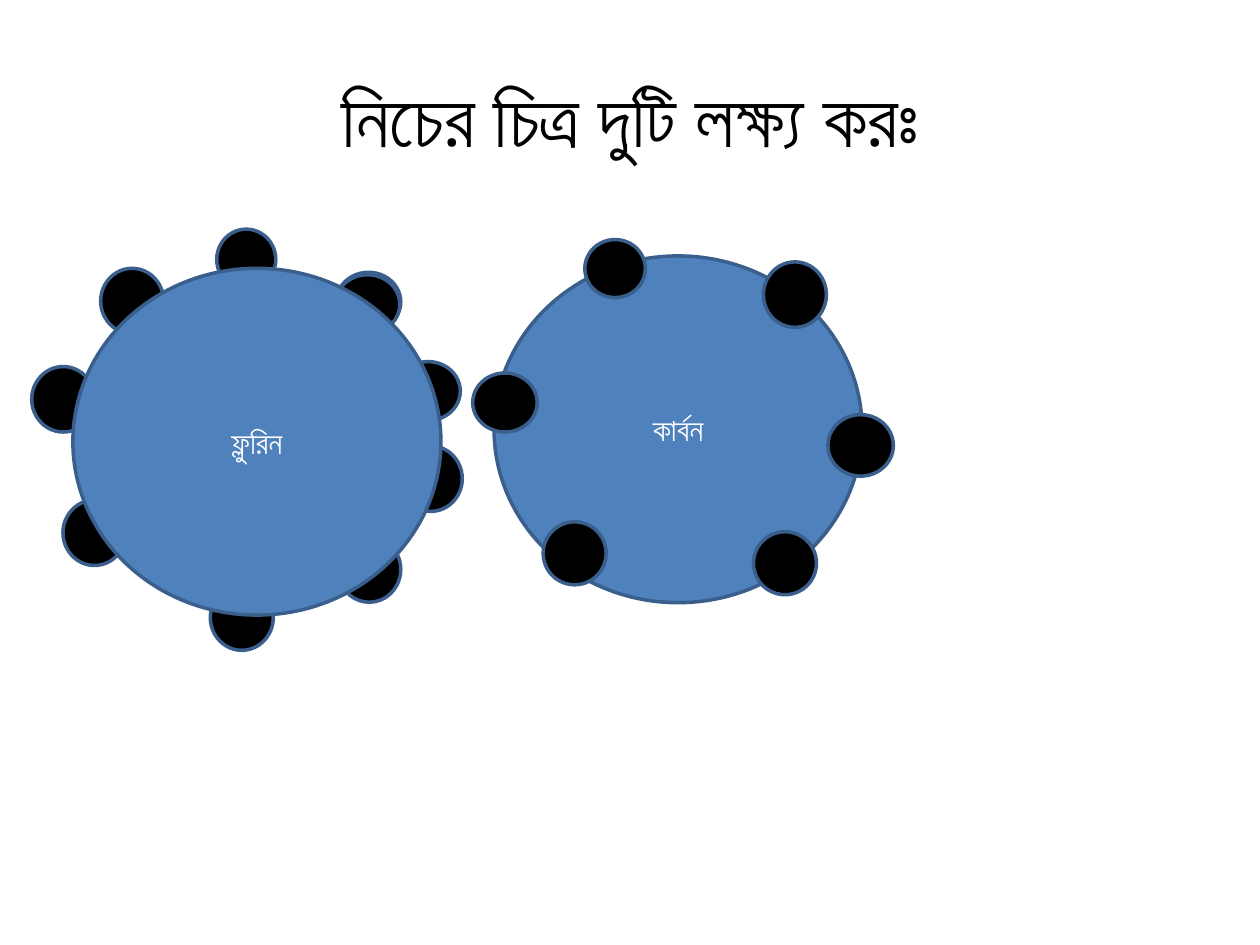
from pptx import Presentation
from pptx.dml.color import RGBColor
from pptx.enum.shapes import MSO_SHAPE as Shape
from pptx.enum.text import MSO_ANCHOR as Anchor, PP_ALIGN as Align
from pptx.util import Cm, Pt

WHITE = RGBColor(0xFF, 0xFF, 0xFF)
BLACK = RGBColor(0, 0, 0)
BLUE = RGBColor(0x4F, 0x81, 0xBD)
OUTLINE = RGBColor(0x3A, 0x5F, 0x8C)

ATOM_SIZE = (7.42, 6.99)
TALL = (1.27, 1.32)
ROUND = (1.27, 1.27)
WIDE = (1.3, 1.19)

# Electrons: left, top, size (cm), from back to front
CARBON_ELECTRONS = [
    (15.39, 5.28, TALL),
    (16.69, 8.36, (1.32, 1.24)),
    (15.19, 10.72, ROUND),
    (10.95, 10.52, ROUND),
    (9.53, 7.52, WIDE),
    (11.79, 4.83, (1.22, 1.17)),
]
FLUORINE_ELECTRONS = [
    (4.37, 4.62, (1.19, 1.22)),
    (8.05, 8.99, TALL),
    (6.81, 10.82, TALL),
    (4.24, 11.79, TALL),
    (1.27, 10.08, TALL),
    (0.64, 7.39, TALL),
    (2.03, 5.41, TALL),
    (6.78, 5.49, WIDE),
    (7.98, 7.29, WIDE),
    (6.76, 5.54, WIDE),
]


def write_text(box, text, size, color):
    frame = box.text_frame
    frame.word_wrap = True
    frame.vertical_anchor = Anchor.MIDDLE
    para = frame.paragraphs[0]
    para.alignment = Align.CENTER
    span = para.add_run()
    span.text = text
    for name, value in {"name": "Calibri", "size": Pt(size)}.items():
        setattr(span.font, name, value)
    span.font.color.rgb = color


def add_circle(page, left, top, size, fill):
    circle = page.shapes.add_shape(
        Shape.OVAL, Cm(left), Cm(top), *map(Cm, size))
    circle.shadow.inherit = False
    circle.fill.solid()
    circle.fill.fore_color.rgb = fill
    circle.line.color.rgb = OUTLINE
    circle.line.width = Pt(2)
    return circle


def add_atom(page, left, top, label):
    atom = add_circle(page, left, top, ATOM_SIZE, BLUE)
    write_text(atom, label, 18, WHITE)


def add_electrons(page, electrons):
    for left, top, size in electrons:
        add_circle(page, left, top, size, BLACK)


def add_title(page, text):
    box = page.shapes.add_textbox(Cm(1.27), Cm(0.76), Cm(22.86), Cm(3.18))
    write_text(box, text, 44, BLACK)


def main():
    deck = Presentation()
    deck.slide_width, deck.slide_height = Cm(25.4), Cm(19.05)
    page = deck.slides.add_slide(deck.slide_layouts[6])

    # Carbon: electrons in front of the atom
    add_atom(page, 9.96, 5.16, "কার্বন")
    add_electrons(page, CARBON_ELECTRONS)

    # Fluorine: electrons behind the atom
    add_electrons(page, FLUORINE_ELECTRONS)
    add_atom(page, 1.47, 5.41, "ফ্লুরিন")

    add_title(page, "নিচের চিত্র দুটি লক্ষ্য করঃ")
    deck.save("out.pptx")


if __name__ == "__main__":
    main()
